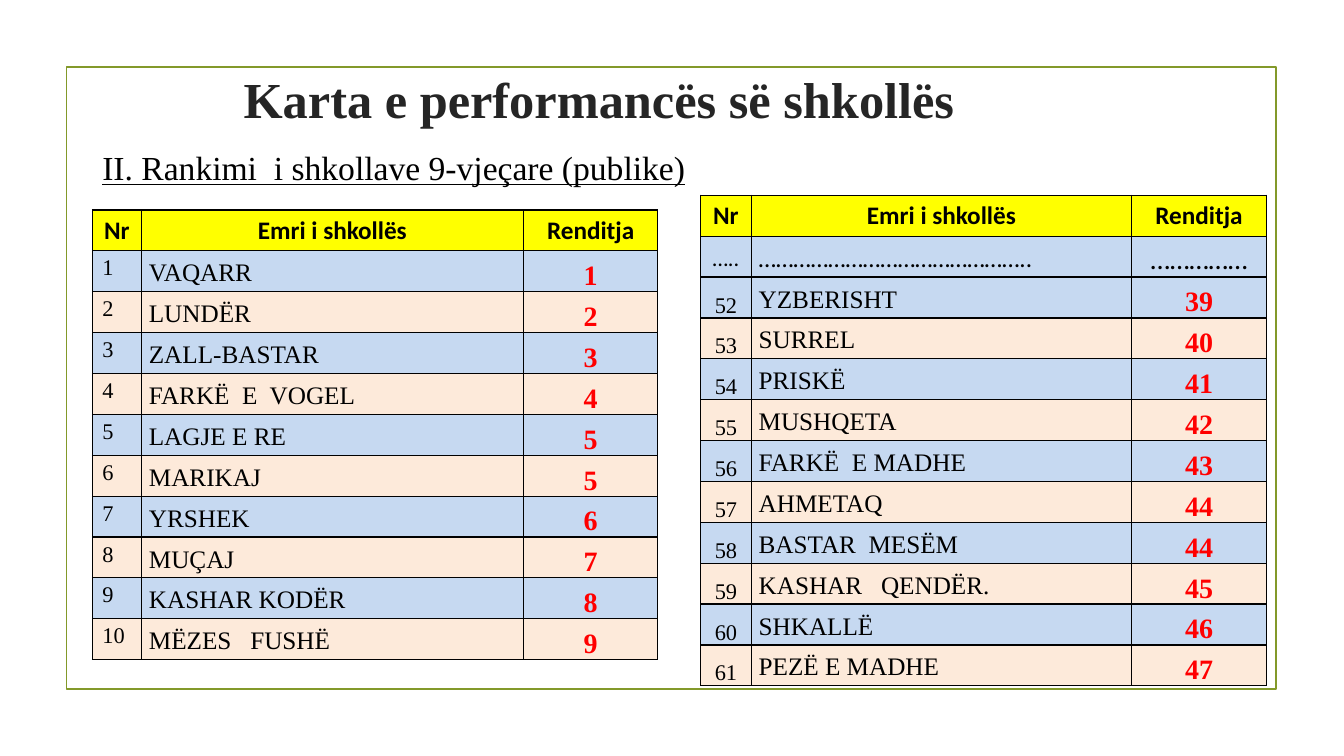
from lxml.etree import SubElement
from pptx import Presentation
from pptx.dml.color import RGBColor
from pptx.enum.shapes import MSO_SHAPE
from pptx.enum.text import MSO_ANCHOR, MSO_AUTO_SIZE, PP_ALIGN
from pptx.oxml.ns import qn
from pptx.util import Pt

COLORS = {
    "frame": "83992A", "title": "252525", "text": "000000", "rank": "FF0000",
    "header": "FFFF00", "blue": "C6D9F1", "peach": "FDEADA",
}
SERIF, SANS = "Times New Roman", "Calibri"
HEADINGS = ["Nr", "Emri i shkollës", "Renditja"]
GAP_ROW = ["…..", "………………………………………..", "……………"]
TOP_SCHOOLS = [
    ("VAQARR", 1), ("LUNDËR", 2), ("ZALL-BASTAR", 3), ("FARKË  E  VOGEL", 4),
    ("LAGJE E RE", 5), ("MARIKAJ", 5), ("YRSHEK", 6), ("MUÇAJ", 7),
    ("KASHAR KODËR", 8), ("MËZES   FUSHË", 9),
]
LAST_SCHOOLS = [
    ("YZBERISHT", 39), ("SURREL", 40), ("PRISKË", 41), ("MUSHQETA", 42),
    ("FARKË  E MADHE", 43), ("AHMETAQ", 44), ("BASTAR  MESËM", 44),
    ("KASHAR   QENDËR.", 45), ("SHKALLË", 46), ("PEZË E MADHE", 47),
]


class RankingSlide:
    """Holds the slide and draws its elements in one style."""

    row_height = 29.2
    cell_margin = 5.4

    def __init__(self, deck):
        self.slide = deck.slides.add_slide(deck.slide_layouts[5])

    def add_text(self, paragraph, text, size, font=SERIF, color="text", bold=False,
                 underline=False, align=PP_ALIGN.LEFT):
        paragraph.alignment = align
        run = paragraph.add_run()
        run.text = text
        run.font.size = Pt(size)
        run.font.name = font
        run.font.bold = bold
        run.font.underline = underline
        run.font.color.rgb = RGBColor.from_string(COLORS[color])

    def frame(self, left, top, width, height):
        border = self.slide.shapes.add_shape(
            MSO_SHAPE.RECTANGLE, Pt(left), Pt(top), Pt(width), Pt(height))
        border.shadow.inherit = False
        border.fill.background()
        border.line.color.rgb = RGBColor.from_string(COLORS["frame"])
        border.line.width = Pt(1.25)

    def title(self, text, left, top, width, height):
        heading = self.slide.shapes.title
        heading.left, heading.top = Pt(left), Pt(top)
        heading.width, heading.height = Pt(width), Pt(height)
        frame = heading.text_frame
        frame.margin_left = frame.margin_right = 0
        frame.margin_top = frame.margin_bottom = 0
        frame.auto_size = MSO_AUTO_SIZE.SHAPE_TO_FIT_TEXT
        self.add_text(frame.paragraphs[0], text, 36, color="title", bold=True)

    def subtitle(self, text, left, top, width, height):
        caption = self.slide.shapes.add_textbox(Pt(left), Pt(top), Pt(width), Pt(height))
        caption.text_frame.word_wrap = False
        caption.text_frame.auto_size = MSO_AUTO_SIZE.SHAPE_TO_FIT_TEXT
        self.add_text(caption.text_frame.paragraphs[0], text, 24, underline=True)

    def cell(self, cell, text, fill, size, anchor=None, **style):
        properties = cell._tc.get_or_add_tcPr()
        for side in ("a:lnL", "a:lnR", "a:lnT", "a:lnB"):
            edge = SubElement(properties, qn(side), w=str(Pt(1)))
            paint = SubElement(edge, qn("a:solidFill"))
            SubElement(paint, qn("a:srgbClr"), val=COLORS["text"])
        cell.fill.solid()
        cell.fill.fore_color.rgb = RGBColor.from_string(COLORS[fill])
        paragraph = cell.text_frame.paragraphs[0]
        if anchor is not None:
            cell.vertical_anchor = anchor
            cell.margin_left = cell.margin_right = Pt(self.cell_margin)
            cell.margin_top = cell.margin_bottom = 0
            paragraph.line_spacing = 1.15
        self.add_text(paragraph, text, size, **style)

    def ranking(self, left, top, widths, schools, first, number_style, gap=False):
        count = len(schools) + 1 + gap
        table = self.slide.shapes.add_table(
            count, len(widths), Pt(left), Pt(top),
            Pt(sum(widths)), Pt(count * self.row_height)).table
        for column, width in zip(table.columns, widths):
            column.width = Pt(width)
        for row in table.rows:
            row.height = Pt(self.row_height)
        center, middle, bottom = PP_ALIGN.CENTER, MSO_ANCHOR.MIDDLE, MSO_ANCHOR.BOTTOM
        for column, heading in enumerate(HEADINGS):
            self.cell(table.cell(0, column), heading, "header", 18,
                      font=SANS, bold=True, align=center)
        if gap:
            looks = [(16, middle, center), (18, middle, PP_ALIGN.LEFT), (20, bottom, center)]
            for column, (dots, (size, anchor, align)) in enumerate(zip(GAP_ROW, looks)):
                self.cell(table.cell(1, column), dots, "blue", size, anchor,
                          font=SANS, align=align)
        for index, (school, rank) in enumerate(schools):
            row = index + 1 + gap
            fill = ("blue", "peach")[index % 2]
            self.cell(table.cell(row, 0), str(first + index), fill, 16, **number_style)
            self.cell(table.cell(row, 1), school, fill, 18, middle)
            self.cell(table.cell(row, 2), str(rank), fill, 20, bottom,
                      color="rank", bold=True, align=center)


def main():
    deck = Presentation()
    deck.slide_width, deck.slide_height = Pt(960), Pt(540)
    page = RankingSlide(deck)
    page.frame(47.5, 48, 864, 444)
    page.title("Karta e performancës së shkollës", 174, 48, 625, 44)
    page.subtitle("II. Rankimi  i shkollave 9-vjeçare (publike)", 66, 101.5, 435, 36)
    page.ranking(66, 150, [35, 273, 96], TOP_SCHOOLS, 1, {})
    page.ranking(500.5, 139.5, [36, 272, 96], LAST_SCHOOLS, 52,
                 {"anchor": MSO_ANCHOR.BOTTOM, "align": PP_ALIGN.CENTER}, gap=True)
    deck.save("out.pptx")


if __name__ == "__main__":
    main()
